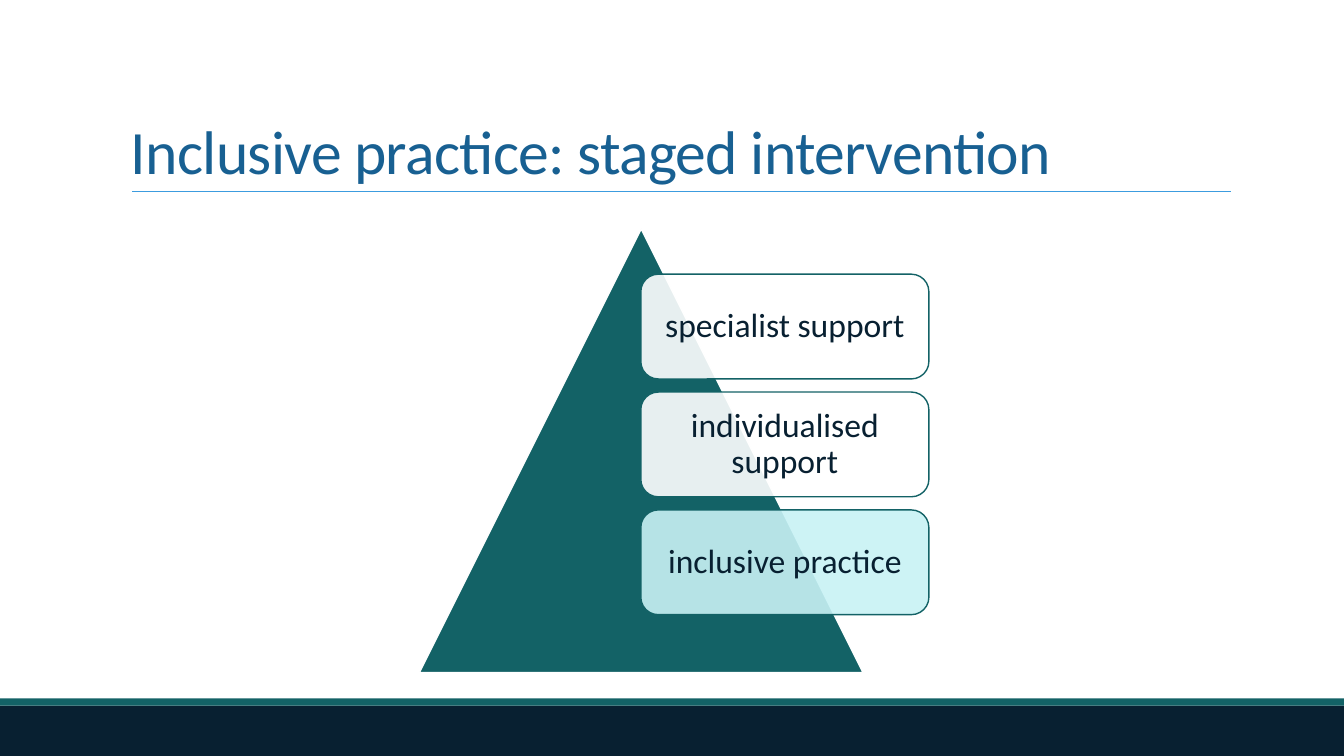
from dataclasses import dataclass

from lxml import etree
from pptx import Presentation
from pptx import util as u
from pptx.dml.color import RGBColor
from pptx.enum import shapes, text
from pptx.oxml import ns


@dataclass(frozen=True)
class Theme:
    font: str = "Calibri"
    navy: str = "082031"
    teal: str = "136266"
    blue: str = "186092"
    rule: str = "3C9CDF"
    white: str = "FFFFFF"
    aqua: str = "C8F2F5"
    title_size: int = 44
    label_size: int = 24


theme = Theme()
Kind = shapes.MSO_SHAPE


def add_box(kind, place, fill, line=None):
    """Add a flat preset shape; place is left, top, width, height in cm."""
    box = page.shapes.add_shape(kind, *map(u.Cm, place))
    box.shadow.inherit = False
    box.fill.solid()
    box.fill.fore_color.rgb = RGBColor.from_string(fill)
    if line:
        box.line.color.rgb = RGBColor.from_string(line)
        box.line.width = u.Pt(1)
    else:
        box.line.fill.background()
    return box


def write(box, words, size, color, frame_format, para_format):
    """Write one paragraph into a box."""
    frame = box.text_frame
    para = frame.paragraphs[0]
    for target, values in ((frame, frame_format), (para, para_format)):
        for name, value in values.items():
            setattr(target, name, value)
    span = para.add_run()
    span.text = words
    span.font.name = theme.font
    span.font.size = u.Pt(size)
    span.font.color.rgb = RGBColor.from_string(color)
    return span


deck = Presentation()
deck.slide_width, deck.slide_height = u.Cm(33.87), u.Cm(19.05)
page = deck.slides.add_slide(deck.slide_layouts[6])

# Footer bands
add_box(Kind.RECTANGLE, (0, 17.78, 33.87, 1.27), theme.navy)
add_box(Kind.RECTANGLE, (0, 17.6, 33.87, 0.18), theme.teal)

# Title and the rule below it
rule = page.shapes.add_connector(
    shapes.MSO_CONNECTOR.STRAIGHT, u.Cm(3.33), u.Cm(4.82), u.Cm(31.01), u.Cm(4.82))
rule.line.color.rgb = RGBColor.from_string(theme.rule)
rule.line.width = u.Pt(0.5)
etree.SubElement(rule.element.spPr, ns.qn("a:effectLst"))

title = page.shapes.add_textbox(u.Cm(3.05), u.Cm(0.79), u.Cm(27.94), u.Cm(4.04))
title_span = write(
    title, "Inclusive practice: staged intervention", theme.title_size, theme.blue,
    {"word_wrap": True, "vertical_anchor": text.MSO_ANCHOR.BOTTOM},
    {"line_spacing": 0.85})
title_span.font._element.set("spc", "-50")

# Pyramid
add_box(Kind.ISOSCELES_TRIANGLE, (10.57, 5.77, 11.18, 11.18), theme.teal, theme.white)

# Stages, from the top of the pyramid to its base
stages = [
    ("specialist support", theme.white),
    ("individualised support", theme.white),
    ("inclusive practice", theme.aqua),
]
label_frame = {
    "word_wrap": True,
    "vertical_anchor": text.MSO_ANCHOR.MIDDLE,
    "margin_left": u.Cm(0.38),
    "margin_right": u.Cm(0.38),
    "margin_top": u.Cm(0.38),
    "margin_bottom": u.Cm(0.38),
}
label_para = {"alignment": text.PP_ALIGN.CENTER, "line_spacing": 0.9}
for row, (words, fill) in enumerate(stages):
    stage = add_box(Kind.ROUNDED_RECTANGLE, (16.15, 6.91 + 2.97 * row, 7.26, 2.64),
                    fill, theme.teal)
    tint = stage.element.spPr.find(ns.qn("a:solidFill"))[0]
    etree.SubElement(tint, ns.qn("a:alpha"), val="90000")
    write(stage, words, theme.label_size, theme.navy, label_frame, label_para)

deck.save("out.pptx")
